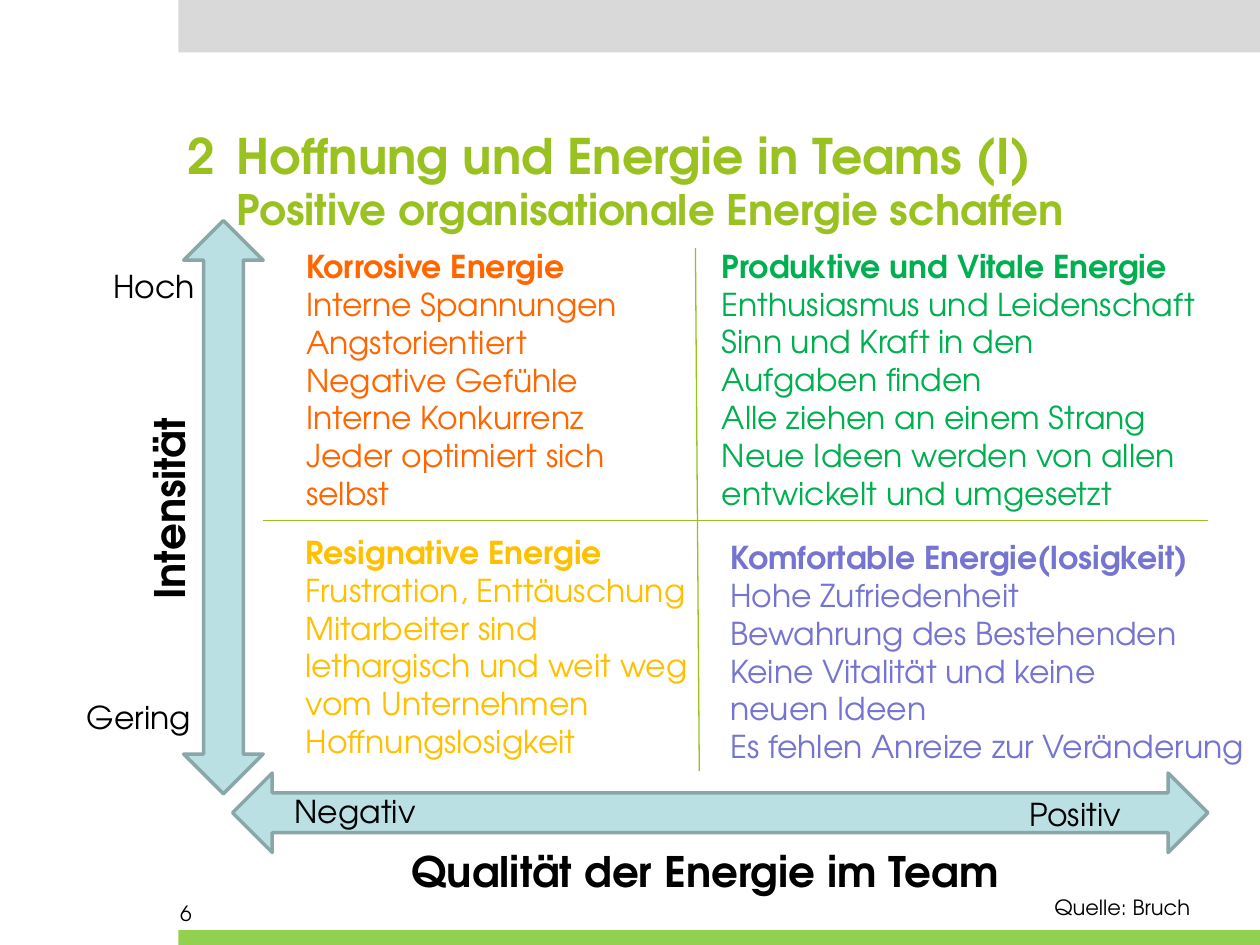
"""Builds the slide on organisational energy in teams as a four-quadrant chart."""
from lxml.etree import SubElement
from pptx import Presentation
from pptx.dml.color import RGBColor
from pptx.enum.shapes import MSO_CONNECTOR as Connector, MSO_SHAPE as Shape
from pptx.enum.text import MSO_ANCHOR as Anchor, PP_ALIGN as Align
from pptx.oxml.ns import qn
from pptx.util import Pt

FONT = "TeX Gyre Adventor"
COLORS = {
    "black": "000000", "title": "99C221", "top": "D9D9D9", "bottom": "92D050",
    "arrow": "BBE0E3", "outline": "8AA6A8", "corrosive": "FF6600",
    "productive": "00B050", "resigned": "FFC000", "comfortable": "7575D1",
}


def add_text(box, lines, size, color, bold=False, wrap=False):
    shape = slide.shapes.add_textbox(*map(Pt, box))
    frame = shape.text_frame
    frame.word_wrap = wrap
    frame.text = "\n".join(lines)
    for paragraph in frame.paragraphs:
        paragraph.alignment = Align.LEFT
        for run in paragraph.runs:
            run.font.name = FONT
            run.font.size = Pt(size)
            run.font.bold = bold
            run.font.color.rgb = RGBColor.from_string(COLORS[color])
    return shape


def add_filled(kind, box, color):
    shape = slide.shapes.add_shape(kind, *map(Pt, box))
    shape.shadow.inherit = False
    shape.fill.solid()
    shape.fill.fore_color.rgb = RGBColor.from_string(COLORS[color])
    shape.line.fill.background()
    return shape


presentation = Presentation()
presentation.slide_width, presentation.slide_height = Pt(720), Pt(540)
slide = presentation.slides.add_slide(presentation.slide_layouts[6])

add_filled(Shape.RECTANGLE, (102, 0, 618, 30), "top")
add_filled(Shape.RECTANGLE, (102, 531.5, 618, 8.5), "bottom")

title = add_text(
    (107.3, 71.5, 612, 64),
    ["2\tHoffnung und Energie in Teams (I)\vPositive organisationale Energie schaffen"],
    28, "title", bold=True, wrap=True)
frame = title.text_frame
frame.margin_left = frame.margin_right = frame.margin_top = frame.margin_bottom = 0
frame.vertical_anchor = Anchor.TOP
heading = frame.paragraphs[0]
heading.runs[-1].font.size = Pt(24)
properties = heading._p.get_or_add_pPr()
properties.set("marL", str(Pt(28)))
properties.set("indent", str(-Pt(28)))
tabs = SubElement(properties, qn("a:tabLst"))
SubElement(tabs, qn("a:tab"), pos=str(Pt(28.8)), algn="l")

quadrants = [
    ((405.4, 137.5, 287.3, 160), "productive", [
        "Produktive und Vitale Energie",
        "Enthusiasmus und Leidenschaft\vSinn und Kraft in den\vAufgaben finden",
        "Alle ziehen an einem Strang",
        "Neue Ideen werden von allen\ventwickelt und umgesetzt"]),
    ((167.5, 301, 237, 138), "resigned", [
        "Resignative Energie",
        "Frustration, Enttäuschung",
        "Mitarbeiter sind\vlethargisch und weit weg\vvom Unternehmen",
        "Hoffnungslosigkeit"]),
    ((167.8, 137.7, 195, 160), "corrosive", [
        "Korrosive Energie",
        "Interne Spannungen",
        "Angstorientiert\vNegative Gefühle",
        "Interne Konkurrenz",
        "Jeder optimiert sich\vselbst"]),
    ((410.2, 304, 314, 138), "comfortable", [
        "Komfortable Energie(losigkeit)",
        "Hohe Zufriedenheit",
        "Bewahrung des Bestehenden",
        "Keine Vitalität und keine",
        "neuen Ideen",
        "Es fehlen Anreize zur Veränderung"]),
]
for box, color, lines in quadrants:
    quadrant = add_text(box, lines, 18, color)
    quadrant.text_frame.paragraphs[0].runs[0].font.bold = True

for box, rotation in [((105, 126, 45.4, 327.6), 0), ((388.8, 185.8, 45.4, 557.3), 90)]:
    arrow = add_filled(Shape.UP_DOWN_ARROW, box, "arrow")
    arrow.rotation = rotation
    arrow.line.color.rgb = RGBColor.from_string(COLORS["outline"])
    arrow.line.width = Pt(2)

labels = [
    ("Hoch", (57.6, 149, 62, 29), 18, False),
    ("Gering", (42.5, 395.3, 75, 29), 18, False),
    ("Negativ", (161.3, 449.3, 84, 29), 18, False),
    ("Positiv", (581, 450.7, 68.4, 29), 18, False),
    ("Qualität der Energie im Team", (228.2, 479.5, 355, 36), 24, True),
    ("Quelle: Bruch", (595.4, 507.6, 92.9, 21.6), 12, False),
    ("6", (95.8, 511.2, 167.8, 28.8), 12, False),
]
for text, box, size, bold in labels:
    add_text(box, [text], size, "black", bold)
intensity = add_text((36, 271.4, 121, 36), ["Intensität"], 24, "black", bold=True)
intensity.rotation = 270

for ends in [(150.5, 297.4, 690.5, 297.4), (397.4, 141.8, 399.6, 440.6)]:
    axis = slide.shapes.add_connector(Connector.STRAIGHT, *map(Pt, ends))
    axis.line.color.rgb = RGBColor.from_string(COLORS["title"])
    axis.line.width = Pt(0.75)
    SubElement(axis._element.spPr, qn("a:effectLst"))

presentation.save("out.pptx")
